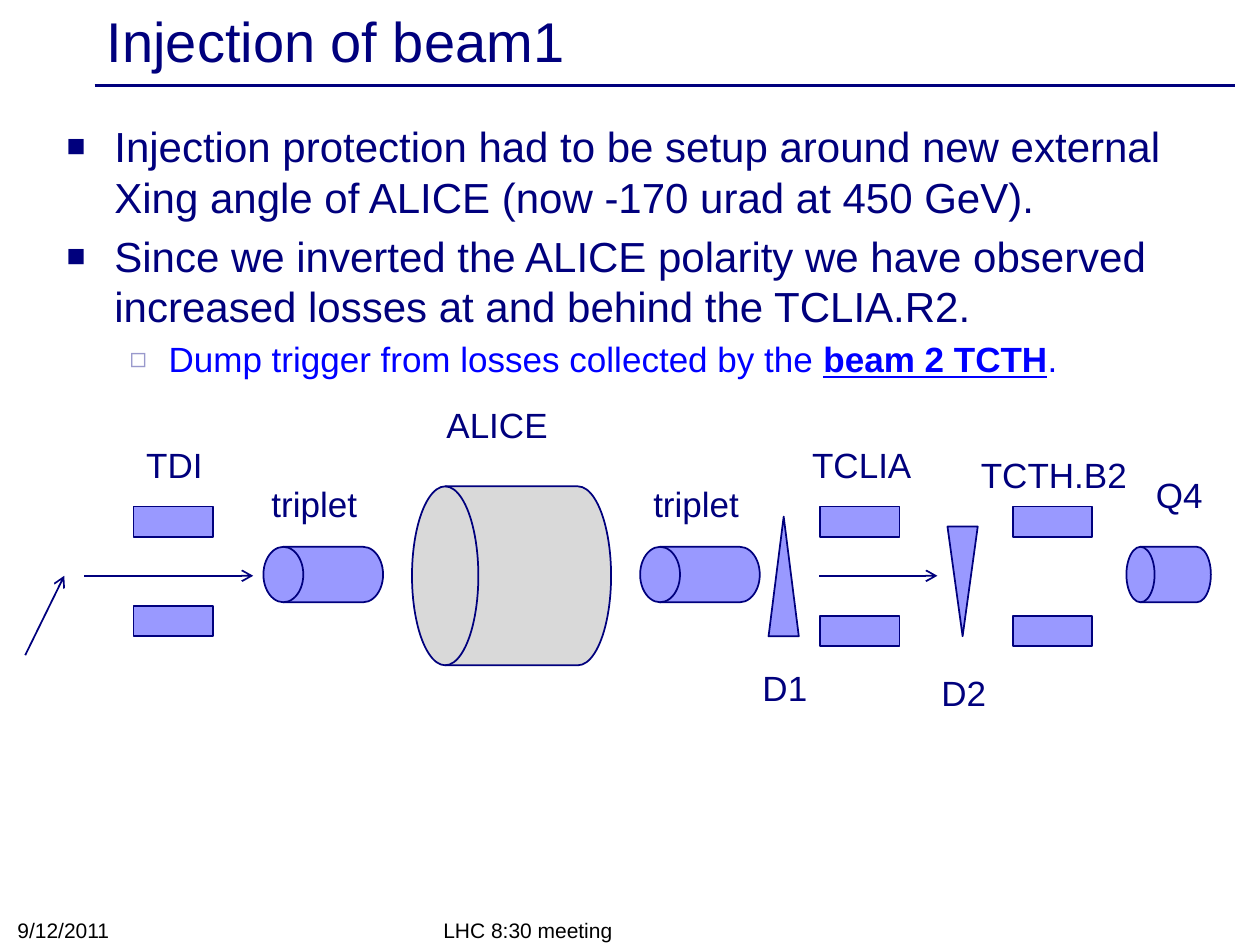
from dataclasses import dataclass
from typing import NamedTuple

from lxml import etree
from pptx import Presentation, util as u
from pptx.dml.color import RGBColor
from pptx.enum import shapes, text
from pptx.oxml import ns

COLS, ROWS = 100, 75
KIND = shapes.MSO_SHAPE


@dataclass(frozen=True)
class Theme:
    font: str = "Arial"
    navy: str = "00007D"
    blue: str = "0000FF"
    black: str = "000000"
    device: str = "9999FF"
    detector: str = "D9D9D9"
    sub_bullet: str = "9999CC"
    title: int = 32
    body: int = 24
    label: int = 20
    footer: int = 12


class Box(NamedTuple):
    """Columns and rows of the slide grid."""
    x: float
    y: float
    w: float
    h: float


class Element(NamedTuple):
    kind: KIND
    box: Box
    fill: str
    rotation: int = 0
    flip: bool = False


class Arrow(NamedTuple):
    x1: float
    y1: float
    x2: float
    y2: float


class Bullet(NamedTuple):
    char: str
    color: str
    size: int
    left: float
    hang: float
    level: int = 0


T = Theme()
prs = Presentation()
prs.slide_width, prs.slide_height = u.Inches(10), u.Inches(7.5)
s = prs.slides.add_slide(prs.slide_layouts[6])


def col(n: float) -> int:
    return round(prs.slide_width * n / COLS)


def row(n: float) -> int:
    return round(prs.slide_height * n / ROWS)


def place(b: Box) -> tuple[int, int, int, int]:
    return col(b.x), row(b.y), col(b.w), row(b.h)


def rgb(color: str) -> RGBColor:
    return RGBColor.from_string(color)


def add_run(p, content: str, *, size: int, color: str = T.navy, strong: bool = False) -> None:
    r = p.add_run()
    r.text = content
    r.font.name, r.font.size = T.font, u.Pt(size)
    r.font.color.rgb = rgb(color)
    r.font.bold = r.font.underline = strong


def add_frame(box: Box, *, anchor=text.MSO_ANCHOR.TOP, wrap: bool = True):
    tf = s.shapes.add_textbox(*place(box)).text_frame
    tf.word_wrap, tf.vertical_anchor = wrap, anchor
    return tf


def add_text(content: str, box: Box, *, size: int = T.label, color: str = T.navy,
             anchor=text.MSO_ANCHOR.TOP, align=text.PP_ALIGN.LEFT, wrap: bool = True) -> None:
    p = add_frame(box, anchor=anchor, wrap=wrap).paragraphs[0]
    p.alignment = align
    add_run(p, content, size=size, color=color)


def set_bullet(p, b: Bullet) -> None:
    p.level = b.level
    pPr = p._p.get_or_add_pPr()
    pPr.set("marL", str(col(b.left)))
    pPr.set("indent", str(-col(b.hang)))
    clr = etree.SubElement(pPr, ns.qn("a:buClr"))
    etree.SubElement(clr, ns.qn("a:srgbClr"), val=b.color)
    etree.SubElement(pPr, ns.qn("a:buSzPct"), val=str(b.size * 1000))
    etree.SubElement(pPr, ns.qn("a:buFont"), typeface=T.font)
    etree.SubElement(pPr, ns.qn("a:buChar"), char=b.char)


def add_line(a: Arrow, *, width: float = 1, head: bool = True) -> None:
    c = s.shapes.add_connector(shapes.MSO_CONNECTOR.STRAIGHT,
                               col(a.x1), row(a.y1), col(a.x2), row(a.y2))
    c.line.color.rgb, c.line.width = rgb(T.navy), u.Pt(width)
    if head:
        etree.SubElement(c.line._get_or_add_ln(), ns.qn("a:tailEnd"), type="arrow")
    etree.SubElement(c._element.spPr, ns.qn("a:effectLst"))


def add_element(e: Element) -> None:
    sp = s.shapes.add_shape(e.kind, *place(e.box))
    sp.shadow.inherit = False
    sp.fill.solid()
    sp.fill.fore_color.rgb = rgb(e.fill)
    sp.line.color.rgb, sp.line.width = rgb(T.navy), u.Pt(1)
    sp.rotation = e.rotation
    if e.flip:
        sp._element.spPr.get_or_add_xfrm().set("flipV", "1")


# Title and rule
add_line(Arrow(7.5, 6.8, 98, 6.8), width=2, head=False)
add_text("Injection of beam1", Box(7.5, 0.3, 90, 5.7), size=T.title, anchor=text.MSO_ANCHOR.MIDDLE)

# Bulleted statements
MAIN = Bullet("■", T.navy, 75, 3.8, 3.8)
SUB = Bullet("◻", T.sub_bullet, 80, 8.1, 3.1, 1)
STATEMENTS = [
    (MAIN, T.body, T.navy, [("Injection protection had to be setup around new external "
                             "Xing angle of ALICE (now -170 urad at 450 GeV).", False)]),
    (MAIN, T.body, T.navy, [("Since we inverted the ALICE polarity we have observed "
                             "increased losses at and behind the TCLIA.R2.", False)]),
    (SUB, T.label, T.blue, [("Dump trigger from losses collected by the ", False),
                            ("beam 2 TCTH", True), (".", False)]),
]
tf = add_frame(Box(4.3, 9.1, 90, 14.2))
for i, (bullet, size, color, runs) in enumerate(STATEMENTS):
    p = tf.add_paragraph() if i else tf.paragraphs[0]
    set_bullet(p, bullet)
    if i:
        p.space_before = u.Pt(size * 0.2)
    for content, strong in runs:
        add_run(p, content, size=size, color=color, strong=strong)

# Footer
for content, box in (("LHC 8:30 meeting", Box(34.2, 72.5, 31.7, 2.8)),
                     ("9/12/2011", Box(0.4, 72.4, 23.3, 2.9))):
    add_text(content, box, size=T.footer, color=T.black, anchor=text.MSO_ANCHOR.BOTTOM)

# Beam line: collimator jaws, magnets and detector
AXIS = 45.7
jaws = [Element(KIND.RECTANGLE, Box(x, y, 6.3, 2.4), T.device)
        for x, lower in ((10.6, 48.1), (65.1, 48.9), (80.4, 48.9)) for y in (40.2, lower)]
magnets = [Element(KIND.FLOWCHART_DIRECT_ACCESS_STORAGE, Box(x, 43.4, w, 4.4), T.device, 180)
           for x, w in ((20.9, 9.5), (50.8, 9.5), (89.4, 6.7))]
detector = Element(KIND.FLOWCHART_MAGNETIC_DISK, Box(33.5, 37.8, 14.2, 15.8), T.detector, 270)
dipoles = [Element(KIND.ISOSCELES_TRIANGLE, Box(61, 41, 2.4, 9.5), T.device),
           Element(KIND.ISOSCELES_TRIANGLE, Box(75.2, 41.8, 2.4, 8.7), T.device, flip=True)]
for element in (*jaws, *magnets, detector, *dipoles):
    add_element(element)

# Beam direction
for arrow in (Arrow(2, 52, 5.1, AXIS), Arrow(6.7, AXIS, 20.1, AXIS), Arrow(65, AXIS, 74.4, AXIS)):
    add_line(arrow)

# Device names: left, top, width
LABELS = [
    ("TDI", 10.6, 34.7, 6.5), ("triplet", 20.5, 37.8, 8.9), ("ALICE", 34.4, 31.5, 10.1),
    ("triplet", 50.8, 37.8, 8.9), ("TCLIA", 63.4, 34.7, 10), ("TCTH.B2", 76.8, 35.5, 13.7),
    ("Q4", 90.7, 37.1, 5.8), ("D1", 59.5, 52.4, 5.6), ("D2", 73.7, 52.8, 5.6),
]
for name, x, y, w in LABELS:
    add_text(name, Box(x, y, w, 4.4), align=text.PP_ALIGN.CENTER, wrap=False)

prs.save("out.pptx")
